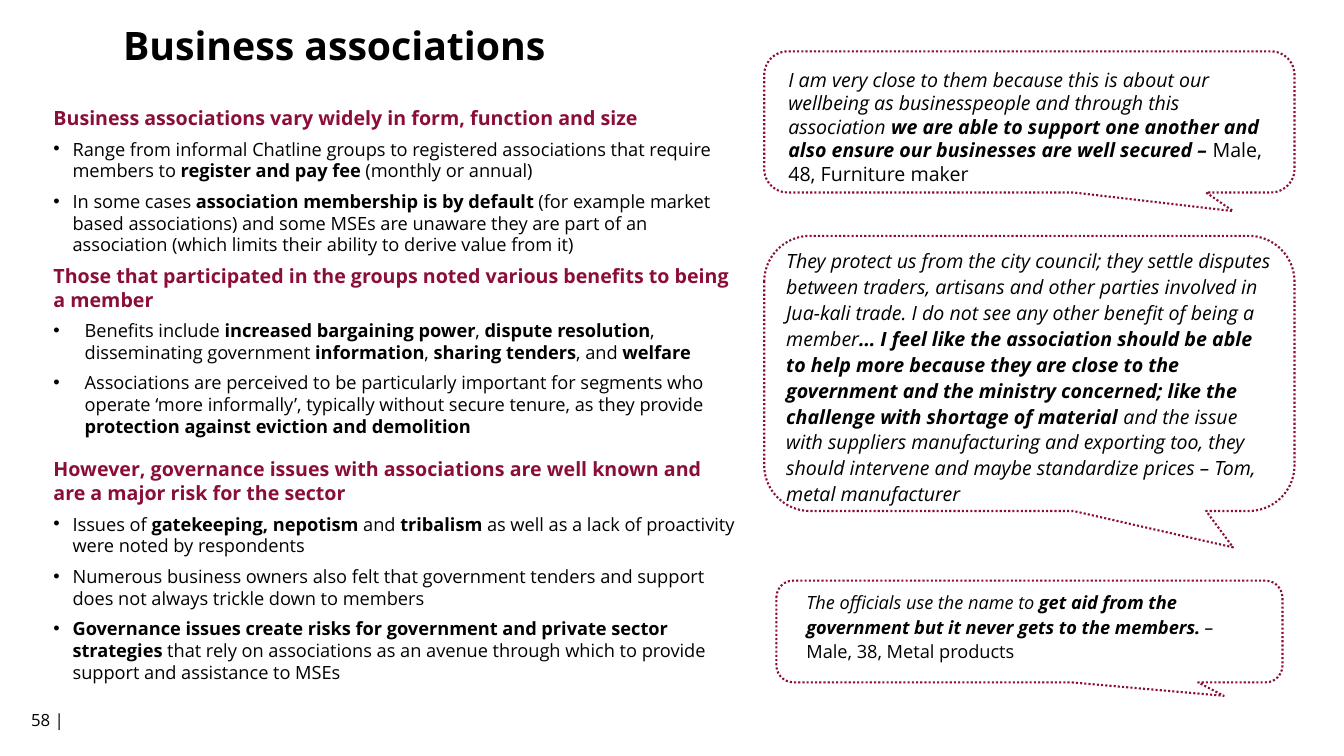
from dataclasses import dataclass

from lxml.etree import SubElement
from pptx import Presentation
from pptx.dml.color import RGBColor
from pptx.enum.dml import MSO_LINE
from pptx.enum.shapes import MSO_SHAPE
from pptx.enum.text import MSO_ANCHOR, MSO_AUTO_SIZE, PP_ALIGN
from pptx.oxml.ns import qn
from pptx.shapes.base import BaseShape
from pptx.slide import Slide
from pptx.text.text import TextFrame, _Paragraph
from pptx.util import Inches, Pt


@dataclass(frozen=True)
class Theme:
    font: str = "Open Sans"
    text: RGBColor = RGBColor(0x00, 0x00, 0x00)
    accent: RGBColor = RGBColor(0x8B, 0x0E, 0x3A)
    title: int = 28
    heading: int = 14
    body: int = 13
    footer: int = 12
    outline: float = 1.5


@dataclass(frozen=True)
class Box:
    left: float
    top: float
    width: float
    height: float


@dataclass(frozen=True)
class Section:
    heading: str
    bullets: tuple[str, ...]  # text between ** marks is bold
    indent: float = 0.19
    space_before: float = 0


@dataclass(frozen=True)
class Quote:
    callout: Box
    text_box: Box
    words: str  # text between ** marks is bold
    speaker: str = ""
    size: int = 14
    line_spacing: float = 1.1


THEME = Theme()

SECTIONS = (
    Section(
        "Business associations vary widely in form, function and size",
        (
            "Range from informal Chatline groups to registered associations that require "
            "members to **register and pay fee **(monthly or annual)",
            "In some cases **association membership is by default **(for example market based "
            "associations) and some MSEs are unaware they are part of an association "
            "(which limits their ability to derive value from it)",
        ),
    ),
    Section(
        "Those that participated in the groups noted various benefits to being a member",
        (
            "Benefits include **increased bargaining power**, **dispute resolution**, "
            "disseminating government **information**, **sharing tenders**, and **welfare**",
            "Associations are perceived to be particularly important for segments who operate "
            "‘more informally’, typically without secure tenure, as they provide "
            "**protection against eviction and demolition**",
        ),
        indent=0.31,
    ),
    Section(
        "However, governance issues with associations are well known and are a major risk "
        "for the sector",
        (
            "Issues of **gatekeeping, nepotism** and **tribalism **as well as a lack of "
            "proactivity were noted by respondents",
            "Numerous business owners also felt that government tenders and support does not "
            "always trickle down to members",
            "**Governance issues create risks for government and private sector strategies **"
            "that rely on associations as an avenue through which to provide support and "
            "assistance to MSEs",
        ),
        space_before=8.4,
    ),
)

QUOTES = (
    Quote(
        Box(7.58, 0.51, 5.26, 1.4),
        Box(7.72, 0.62, 4.99, 1.28),
        "I am very close to them because this is about our wellbeing as businesspeople and "
        "through this association **we are able to support one another and also ensure our "
        "businesses are well secured – **",
        "Male, 48, Furniture maker",
        line_spacing=1.0,
    ),
    Quote(
        Box(7.58, 2.34, 5.26, 2.73),
        Box(7.7, 2.4, 5.03, 2.67),
        "They protect us from the city council; they settle disputes between traders, artisans "
        "and other parties involved in Jua-kali trade. I do not see any other benefit of being "
        "a member**… I feel like the association should be able to help more because they are "
        "close to the government and the ministry concerned; like the challenge with shortage "
        "of material **and the issue with suppliers manufacturing and exporting too, they "
        "should intervene and maybe standardize prices – Tom, metal manufacturer",
    ),
    Quote(
        Box(7.7, 5.76, 5.02, 1.01),
        Box(7.9, 5.8, 4.63, 0.8),
        "The officials use the name to **get aid from the government but it never gets to the "
        "members. **– ",
        "Male, 38, Metal products",
        size=13,
    ),
)


def place(shape: BaseShape, box: Box) -> None:
    shape.left, shape.top = Inches(box.left), Inches(box.top)
    shape.width, shape.height = Inches(box.width), Inches(box.height)


def prepare_frame(frame: TextFrame) -> _Paragraph:
    frame.word_wrap = True
    frame.auto_size = MSO_AUTO_SIZE.NONE
    frame.vertical_anchor = MSO_ANCHOR.TOP
    return frame.paragraphs[0]


def set_font(paragraph: _Paragraph, size: int, color: RGBColor = THEME.text) -> None:
    paragraph.font.name = THEME.font
    paragraph.font.size = Pt(size)
    paragraph.font.color.rgb = color


def set_bullet(paragraph: _Paragraph, indent: float, character: str = "") -> None:
    properties = paragraph._p.get_or_add_pPr()
    properties.set("marL", str(Inches(indent)))
    properties.set("indent", str(-Inches(indent)))
    if character:
        SubElement(properties, qn("a:buFont"), typeface="Arial")
        SubElement(properties, qn("a:buChar"), char=character)
    else:
        SubElement(properties, qn("a:buNone"))


def add_marked_runs(paragraph: _Paragraph, words: str) -> None:
    for index, part in enumerate(words.split("**")):
        if part:
            run = paragraph.add_run()
            run.text = part
            if index % 2:
                run.font.bold = True


def fill_body(frame: TextFrame) -> None:
    paragraph = prepare_frame(frame)
    for section in SECTIONS:
        for index, words in enumerate((section.heading, *section.bullets)):
            if paragraph is None:
                paragraph = frame.add_paragraph()
            is_heading = index == 0
            set_bullet(paragraph, 0 if is_heading else section.indent, "" if is_heading else "•")
            paragraph.space_before = Pt(section.space_before if is_heading else 0)
            paragraph.space_after = Pt(6)
            if is_heading:
                set_font(paragraph, THEME.heading, THEME.accent)
                paragraph.font.bold = True
            else:
                set_font(paragraph, THEME.body)
            add_marked_runs(paragraph, words)
            paragraph = None


def add_text_box(slide: Slide, box: Box) -> _Paragraph:
    shape = slide.shapes.add_textbox(0, 0, 0, 0)
    place(shape, box)
    return prepare_frame(shape.text_frame)


def add_quote(slide: Slide, quote: Quote) -> None:
    callout = slide.shapes.add_shape(MSO_SHAPE.ROUNDED_RECTANGULAR_CALLOUT, 0, 0, 0, 0)
    place(callout, quote.callout)
    for index, value in enumerate((0.384, 0.632, 0.167)):
        callout.adjustments[index] = value
    callout.shadow.inherit = False
    callout.fill.background()
    callout.line.color.rgb = THEME.accent
    callout.line.width = Pt(THEME.outline)
    callout.line.dash_style = MSO_LINE.ROUND_DOT

    paragraph = add_text_box(slide, quote.text_box)
    paragraph.line_spacing = quote.line_spacing
    set_font(paragraph, quote.size)
    paragraph.font.italic = True
    add_marked_runs(paragraph, quote.words)
    if quote.speaker:
        run = paragraph.add_run()
        run.text = quote.speaker
        run.font.italic = False


def main() -> None:
    presentation = Presentation()
    presentation.slide_width, presentation.slide_height = Inches(13.33), Inches(7.5)
    slide = presentation.slides.add_slide(presentation.slide_layouts[1])

    # Title
    title = slide.shapes.title
    place(title, Box(1.12, 0.16, 4.5, 0.57))
    paragraph = prepare_frame(title.text_frame)
    paragraph.text = "Business associations"
    paragraph.alignment = PP_ALIGN.LEFT
    set_font(paragraph, THEME.title)
    paragraph.font.bold = True

    # Findings
    body = slide.placeholders[1]
    place(body, Box(0.43, 1, 6.99, 5.87))
    fill_body(body.text_frame)

    # Quotes
    for quote in QUOTES:
        add_quote(slide, quote)

    # Page number
    paragraph = add_text_box(slide, Box(0.21, 6.99, 0.69, 0.4))
    paragraph.text = "58 |"
    set_font(paragraph, THEME.footer)

    presentation.save("out.pptx")


if __name__ == "__main__":
    main()
